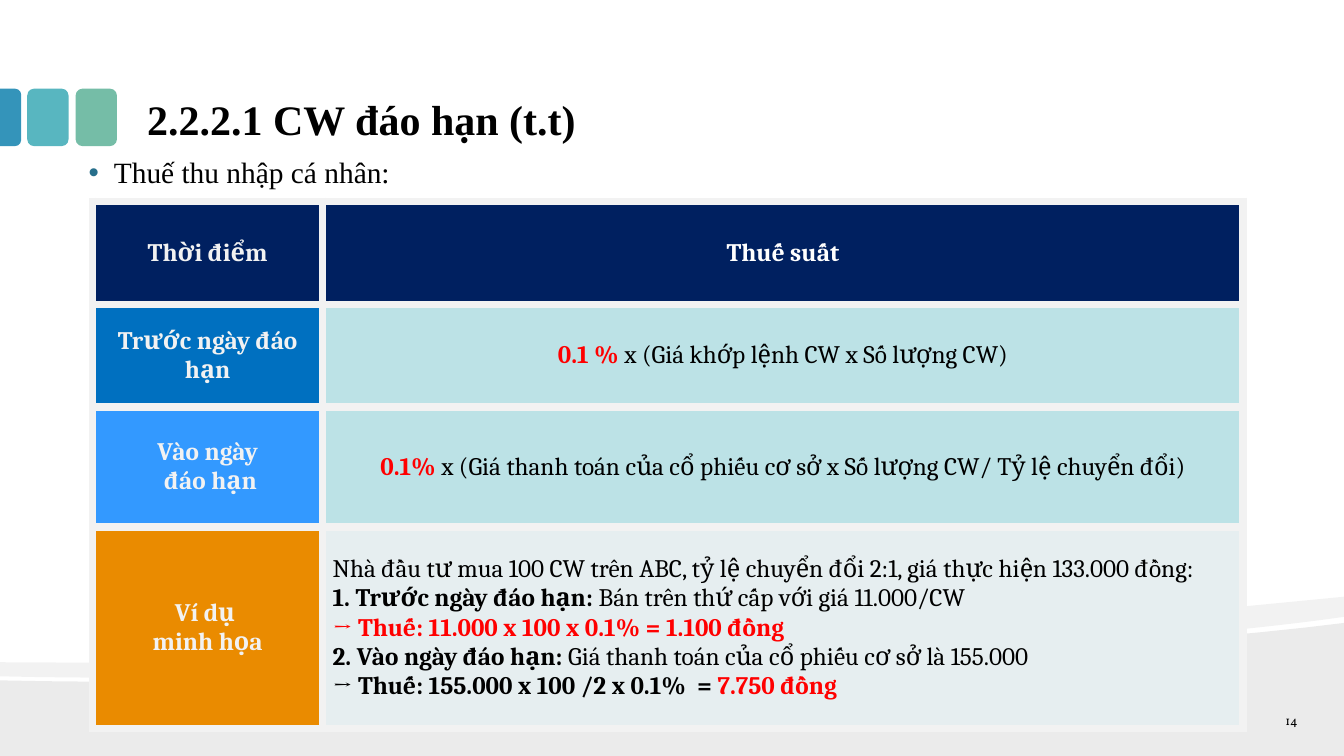
from lxml.etree import SubElement
from pptx import Presentation
from pptx.dml.color import RGBColor
from pptx.enum.shapes import MSO_SHAPE as SHAPE
from pptx.enum.text import MSO_ANCHOR as ANCHOR, PP_ALIGN as ALIGN
from pptx.oxml.ns import qn
from pptx.util import Inches, Pt

BLACK, RED, PALE, WHITE = "000000", "FF0000", "F2F2F2", "FFFFFF"
NAVY, AQUA, MIST = "002060", "BCE2E6", "E6EEF0"

ROWS = [
    (NAVY, [[("Thời điểm", PALE, True)]],
     NAVY, [[("Thuế suất", WHITE, True)]]),
    ("0070C0", [[("Trước ngày đáo hạn", PALE, True)]],
     AQUA, [[("0.1 %", RED, True),
             (" x (Giá khớp lệnh CW x Số lượng CW)", BLACK, False)]]),
    ("3399FF", [[("Vào ngày", PALE, True)], [(" đáo hạn", PALE, True)]],
     AQUA, [[("0.1%", RED, True),
             (" x (Giá thanh toán của cổ phiếu cơ sở x Số lượng CW/ Tỷ lệ chuyển đổi)",
              BLACK, False)]]),
    ("EA8B00", [[("Ví dụ ", PALE, True)], [("minh họa", PALE, True)]],
     MIST, [[("Nhà đầu tư mua 100 CW trên ABC, tỷ lệ chuyển đổi 2:1, "
              "giá thực hiện 133.000 đồng:", BLACK, False)],
            [("1. Trước ngày đáo hạn: ", BLACK, True),
             ("Bán trên thứ cấp với giá 11.000/CW", BLACK, False)],
            [("→ ", RED, False),
             ("Thuế: 11.000 x 100 x 0.1% = 1.100 đồng", RED, True)],
            [("2. Vào ngày đáo hạn: ", BLACK, True),
             ("Giá thanh toán của cổ phiếu cơ sở là 155.000", BLACK, False)],
            [("→ ", BLACK, False),
             ("Thuế: 155.000 x 100 /2 x 0.1%  = ", BLACK, True),
             ("7.750 đồng", RED, True)]]),
]


def rgb(value):
    return RGBColor.from_string(value)


def curve(*ends, steps=24):
    points = []
    for i in range(steps + 1):
        t = i / steps
        weights = ((1 - t) ** 3, 3 * t * (1 - t) ** 2, 3 * t * t * (1 - t), t ** 3)
        points.append(tuple(sum(w * p[axis] for w, p in zip(weights, ends))
                            for axis in (0, 1)))
    return points


class Deck:
    """Holds the slide and its style, and adds each kind of element."""
    heading_font, table_font, number_font = "Times New Roman", "Cambria", "Vollkorn"

    def __init__(self, prs):
        self.s = prs.slides.add_slide(prs.slide_layouts[5])

    def paint(self, sp, color):
        sp.shadow.inherit = False
        sp.fill.solid()
        sp.fill.fore_color.rgb = rgb(color)
        sp.line.fill.background()

    def style(self, r, size, font, color=BLACK, bold=False):
        r.font.size, r.font.name, r.font.bold = Pt(size), font, bold
        r.font.color.rgb = rgb(color)

    def frame(self, sp, box, text, size, font, anchor, align=ALIGN.LEFT, bold=False):
        sp.left, sp.top, sp.width, sp.height = map(Inches, box)
        tf = sp.text_frame
        tf.text = text
        tf.word_wrap, tf.vertical_anchor = True, anchor
        tf.margin_left = tf.margin_right = Inches(0.13)
        tf.margin_top = tf.margin_bottom = Inches(0.07)
        p = tf.paragraphs[0]
        p.alignment = align
        self.style(p.runs[0], size, font, bold=bold)
        return p

    def title(self, text, box):
        self.frame(self.s.shapes.title, box, text, 30, self.heading_font,
                   ANCHOR.BOTTOM, bold=True)

    def text(self, text, box, *look):
        sp = self.s.shapes.add_textbox(*map(Inches, box))
        return self.frame(sp, box, text, *look)

    def bullet(self, text, box, color):
        p = self.text(text, box, 21, self.heading_font, ANCHOR.TOP)
        p.line_spacing = 0.9
        pPr = p._p.get_or_add_pPr()
        pPr.set("marL", str(Inches(0.25)))
        pPr.set("indent", str(Inches(-0.25)))
        SubElement(SubElement(pPr, qn("a:buClr")), qn("a:srgbClr"), val=color)
        SubElement(pPr, qn("a:buFont"), typeface="Arial")
        SubElement(pPr, qn("a:buChar"), char="•")

    def block(self, kind, box, color, rotation=0):
        sp = self.s.shapes.add_shape(kind, *map(Inches, box))
        sp.rotation = rotation
        self.paint(sp, color)
        return sp

    def band(self, points, opacity):
        points = [(Inches(x), Inches(y)) for x, y in points]
        builder = self.s.shapes.build_freeform(*points[0])
        builder.add_line_segments(points[1:])
        sp = builder.convert_to_shape()
        self.paint(sp, BLACK)
        clr = sp.fill._xPr.find(qn("a:solidFill"))[0]
        SubElement(clr, qn("a:alpha"), val=str(opacity * 1000))

    def cell(self, cell, fill, lines, align):
        tcPr = cell._tc.get_or_add_tcPr()
        for side in ("lnL", "lnR", "lnT", "lnB"):
            ln = SubElement(tcPr, qn("a:" + side), w=str(Pt(6)))
            SubElement(SubElement(ln, qn("a:solidFill")), qn("a:srgbClr"), val=PALE)
        cell.fill.solid()
        cell.fill.fore_color.rgb = rgb(fill)
        cell.vertical_anchor = ANCHOR.MIDDLE
        tf = cell.text_frame
        for i, line in enumerate(lines):
            p = tf.add_paragraph() if i else tf.paragraphs[0]
            p.alignment = align
            for text, color, bold in line:
                r = p.add_run()
                r.text = text
                self.style(r, 18, self.table_font, color, bold)

    def table(self, rows, box, widths, heights):
        table = self.s.shapes.add_table(len(rows), len(widths),
                                        *map(Inches, box)).table
        for column, width in zip(table.columns, widths):
            column.width = Inches(width)
        for row, height, (fill, label, tint, lines) in zip(table.rows, heights, rows):
            row.height = Inches(height)
            self.cell(row.cells[0], fill, label, ALIGN.CENTER)
            self.cell(row.cells[1], tint, lines,
                      ALIGN.LEFT if tint == MIST else ALIGN.CENTER)


def main():
    prs = Presentation()
    prs.slide_width, prs.slide_height = Inches(13.33), Inches(7.5)
    deck = Deck(prs)
    deck.band([(13.33, 7.5), (0, 7.5)]
              + curve((0, 6.75), (3.52, 6.83), (10.42, 6.55), (13.33, 6.18)), 8)
    deck.band(curve((13.33, 6.12), (12.56, 6.23), (11.49, 6.33), (10.29, 6.41))
              + curve((10.29, 6.41), (6.98, 6.63), (2.58, 6.77), (0, 6.71))
              + curve((0, 6.57), (6.52, 6.62), (9.71, 6.27), (13.33, 5.92)), 5)
    for x, color in ((0.75, "75BDA7"), (0.27, "58B6C0")):
        deck.block(SHAPE.ROUNDED_RECTANGLE, (x, 0.88, 0.41, 0.57), color)
    edge = deck.block(SHAPE.ROUND_2_SAME_RECTANGLE, (-0.18, 1.06, 0.57, 0.21),
                      "3494BA", 90)
    edge.adjustments[0] = 0.29
    deck.title("2.2.2.1 CW đáo hạn (t.t)", (1.33, 0.69, 10.67, 0.81))
    deck.bullet("Thuế thu nhập cá nhân:", (0.75, 1.5, 10.67, 0.5), "276F8B")
    deck.table(ROWS, (0.92, 2, 11.41, 5.23), (2.28, 9.13), (1.02, 1.02, 1.19, 2))
    deck.text("14", (12.11, 7.05, 0.89, 0.2), 9, deck.number_font,
              ANCHOR.MIDDLE, ALIGN.RIGHT)
    prs.save("out.pptx")


if __name__ == "__main__":
    main()
